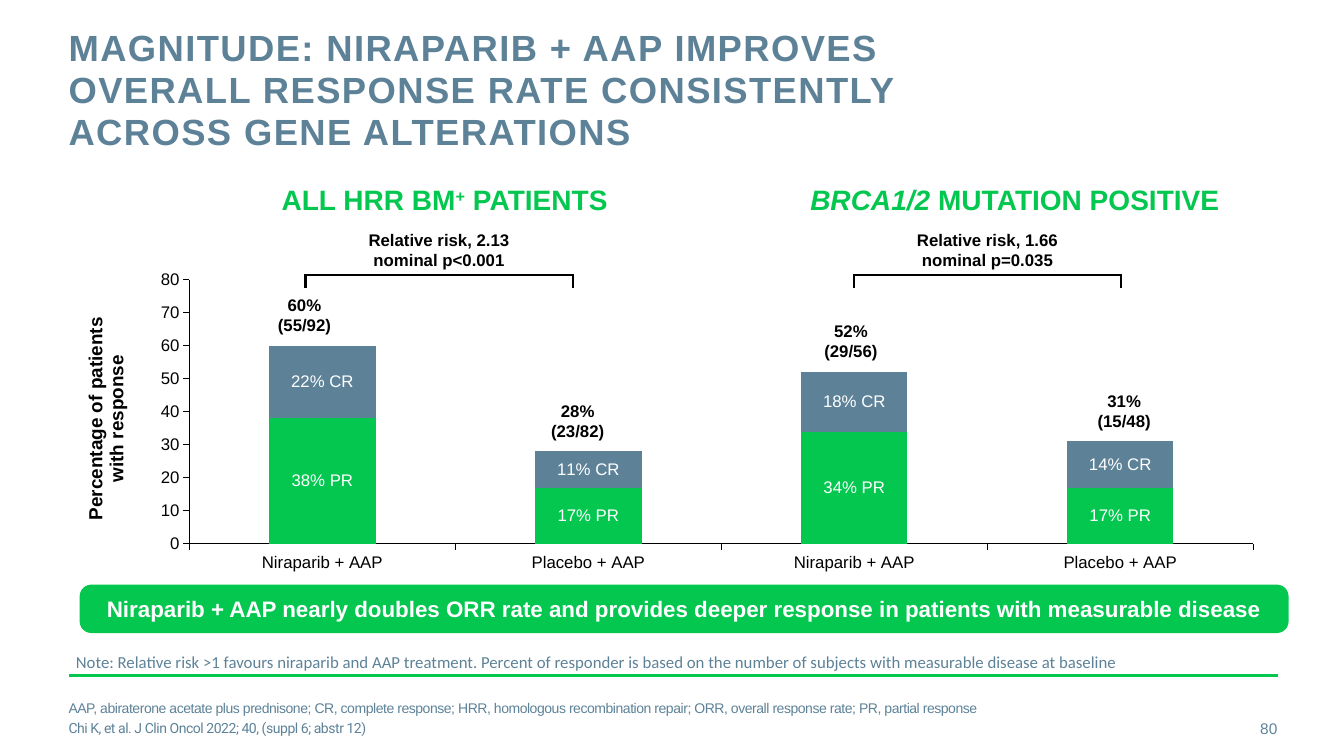
from dataclasses import dataclass

import pptx
import pptx.chart.data
import pptx.dml.color
import pptx.enum.chart
import pptx.enum.shapes
import pptx.enum.text
import pptx.oxml
import pptx.oxml.ns
import pptx.util
from pptx.util import Inches, Pt

ALIGN = pptx.enum.text.PP_ALIGN
ANCHOR = pptx.enum.text.MSO_ANCHOR


@dataclass(frozen=True)
class Theme:
    green: str = "03C74F"
    slate: str = "5D8298"
    black: str = "000000"
    white: str = "FFFFFF"
    face: str = "Arial"
    title: float = 26
    head: float = 20
    claim: float = 16
    axis: float = 13.5
    label: float = 12
    page: float = 11
    foot: float = 10


THEME = Theme()
PEAK = 80
ARMS = ["Niraparib + AAP", "Placebo + AAP"] * 2
PARTIAL = [38, 17, 34, 17]
FULL = [22, 11, 18, 14]
COUNTS = ["55/92", "23/82", "29/56", "15/48"]


def rgb(code):
    return pptx.dml.color.RGBColor.from_string(code)


def style(font, size, color, bold=False, face=THEME.face):
    font.size, font.bold, font.name = Pt(size), bold, face
    font.color.rgb = rgb(color)


def add_run(para, text, size, color, bold=False, face=THEME.face, space=0):
    run = para.add_run()
    run.text = text
    style(run.font, size, color, bold, face)
    if space:
        run.font._element.set("spc", str(round(space * 100)))
    return run


def add_lines(para, lines, *look):
    """Put lines in one paragraph, with a line break between them."""
    for i, line in enumerate(lines):
        if i:
            para.add_line_break()
        add_run(para, line, *look)


def set_frame(frame, align=ALIGN.LEFT, anchor=ANCHOR.TOP, wrap=True):
    frame.margin_left = frame.margin_right = 0
    frame.margin_top = frame.margin_bottom = 0
    frame.word_wrap, frame.vertical_anchor = wrap, anchor
    frame.auto_size = pptx.enum.text.MSO_AUTO_SIZE.NONE
    frame.paragraphs[0].alignment = align
    return frame


def add_text(slide, box, *look, **more):
    shape = slide.shapes.add_textbox(*map(Inches, box))
    return set_frame(shape.text_frame, *look, **more)


def add_line(shapes, x1, y1, x2, y2, color, width):
    line = shapes.add_connector(pptx.enum.shapes.MSO_CONNECTOR.STRAIGHT,
                                Inches(x1), Inches(y1), Inches(x2), Inches(y2))
    line.line.color.rgb, line.line.width = rgb(color), Pt(width)
    line._element.spPr.append(pptx.oxml.parse_xml(
        "<a:effectLst %s/>" % pptx.oxml.ns.nsdecls("a")))


def add_title(slide, box):
    shape = slide.shapes.title
    shape.left, shape.top, shape.width, shape.height = map(Inches, box)
    para = set_frame(shape.text_frame).paragraphs[0]
    para.line_spacing = Pt(30)
    add_run(para, "MAGNITUDE: NIRAPARIB + AAP IMPROVES OVERALL RESPONSE RATE "
            "CONSISTENTLY ACROSS GENE ALTERATIONS",
            THEME.title, THEME.slate, True, space=1)


def set_place(parent, after, inner=False, **parts):
    """Fix a chart part at shares of the chart's size."""
    for old in parent.findall(pptx.oxml.ns.qn("c:layout")):
        parent.remove(old)
    target = '<c:layoutTarget val="inner"/>' if inner else ""
    modes = "".join(f'<c:{key}Mode val="edge"/>' for key in "xy")
    sizes = "".join(f'<c:{key} val="{val}"/>' for key, val in parts.items())
    node = pptx.oxml.parse_xml(
        f'<c:layout {pptx.oxml.ns.nsdecls("c")}><c:manualLayout>'
        f'{target}{modes}{sizes}</c:manualLayout></c:layout>')
    if after is None:
        parent.insert(0, node)
    else:
        after.addnext(node)


def style_axis(axis):
    axis.has_major_gridlines = False
    axis.major_tick_mark = pptx.enum.chart.XL_TICK_MARK.OUTSIDE
    axis.minor_tick_mark = pptx.enum.chart.XL_TICK_MARK.NONE
    axis.format.line.color.rgb = rgb(THEME.black)
    axis.format.line.width = Pt(0.75)
    style(axis.tick_labels.font, THEME.label, THEME.black)


def add_bars(slide, box):
    data = pptx.chart.data.CategoryChartData()
    data.categories = ARMS
    data.add_series("PR", PARTIAL)
    data.add_series("CR", FULL)
    chart = slide.shapes.add_chart(
        pptx.enum.chart.XL_CHART_TYPE.COLUMN_STACKED,
        *map(Inches, box), data).chart
    chart.has_legend = chart.has_title = False
    style(chart.font, THEME.label, THEME.black)
    plot = chart.plots[0]
    plot.gap_width, plot.overlap, plot.vary_by_categories = 150, 100, False
    for bars, color in zip(plot.series, (THEME.green, THEME.slate)):
        bars.format.fill.solid()
        bars.format.fill.fore_color.rgb = rgb(color)
        tags = bars.data_labels
        tags.show_value = True
        tags.position = pptx.enum.chart.XL_LABEL_POSITION.CENTER
        tags.number_format = f'0"% {bars.name}"'
        tags.number_format_is_linked = False
        style(tags.font, THEME.label, THEME.white)
    style_axis(chart.category_axis)
    axis = chart.value_axis
    style_axis(axis)
    axis.minimum_scale, axis.maximum_scale, axis.major_unit = 0, PEAK, 10
    para = axis.axis_title.text_frame.paragraphs[0]
    para.alignment = ALIGN.CENTER
    add_run(para, "Percentage of patients", THEME.axis, THEME.black, True)
    para = axis.axis_title.text_frame.add_paragraph()
    para.alignment = ALIGN.CENTER
    add_run(para, "with response", THEME.axis, THEME.black, True)
    title = axis.axis_title._element
    set_place(title, title.find(pptx.oxml.ns.qn("c:tx")), x=0.01, y=0.16)
    area = chart._chartSpace.chart.plotArea
    set_place(area, None, True, x=0.1, y=0.05, w=0.88, h=0.84)


def add_totals(slide, box):
    """Centre each arm's total above its bar; box spans the bars' axis."""
    left, top, step, height = box
    for i, (part, full, count) in enumerate(zip(PARTIAL, FULL, COUNTS)):
        total = part + full
        y = top + height * (1 - total / PEAK) - 0.51
        frame = add_text(slide, (left + i * step, y, 0.94, 0.4), ALIGN.CENTER)
        add_lines(frame.paragraphs[0], [f"{total}%", f"({count})"],
                  THEME.label, THEME.black, True)


def add_group(slide, box, head, risk, span):
    """Head one patient group and bracket its two arms."""
    left, top, width, height = box
    para = add_text(slide, box, ALIGN.CENTER, ANCHOR.MIDDLE).paragraphs[0]
    for text, kind in head:
        run = add_run(para, text, THEME.head, THEME.green, True)
        run.font.italic = kind == "italic"
        if kind == "raised":
            run.font._element.set("baseline", "30000")
    start, end = span
    mid = (start + end) / 2
    frame = add_text(slide, (mid - 0.73, top + 0.52, 1.46, 0.4), ALIGN.CENTER)
    add_lines(frame.paragraphs[0], risk, THEME.label, THEME.black, True)
    shapes = slide.shapes.add_group_shape().shapes
    y = top + 0.97
    add_line(shapes, start, y, end, y, THEME.black, 1.5)
    for x in (start + 0.01, end - 0.01):
        add_line(shapes, x, y - 0.01, x, y + 0.13, THEME.black, 1.5)


def add_claim(slide, box):
    shape = slide.shapes.add_shape(
        pptx.enum.shapes.MSO_SHAPE.ROUNDED_RECTANGLE, *map(Inches, box))
    shape.adjustments[0] = 0.24
    shape.shadow.inherit = False
    shape.fill.solid()
    shape.fill.fore_color.rgb = rgb(THEME.green)
    shape.line.fill.background()
    frame = set_frame(shape.text_frame, ALIGN.CENTER, ANCHOR.MIDDLE)
    add_run(frame.paragraphs[0], "Niraparib + AAP nearly doubles ORR rate and "
            "provides deeper response in patients with measurable disease",
            THEME.claim, THEME.white, True)


def add_foot(slide, box):
    left, top, width, height = box
    para = add_text(slide, (left + 0.02, top, 10.44, 0.42), ALIGN.CENTER,
                    wrap=False).paragraphs[0]
    para.line_spacing = 0.9
    add_run(para, "Note: Relative risk >1 favours niraparib and AAP treatment. "
            "Percent of responder is based on the number of subjects with "
            "measurable disease at baseline",
            THEME.label, THEME.slate, face="Calibri")
    add_line(slide.shapes, left, top + 0.21, left + width, top + 0.21,
             THEME.green, 2)
    frame = add_text(slide, (left, top + 0.43, 11.84, 0.4),
                     anchor=ANCHOR.MIDDLE)
    add_run(frame.paragraphs[0], "AAP, abiraterone acetate plus prednisone; "
            "CR, complete response; HRR, homologous recombination repair; "
            "ORR, overall response rate; PR, partial response",
            THEME.foot, THEME.slate, space=-0.3)
    para = frame.add_paragraph()
    para.space_before = Pt(2)
    add_run(para, "Chi K, et al. J Clin Oncol 2022; 40, (suppl 6; abstr 12)",
            THEME.foot, THEME.slate, face="Roboto", space=-0.3)
    frame = add_text(slide, (left + width - 0.87, top + 0.54, 0.86, 0.4),
                     ALIGN.RIGHT, ANCHOR.MIDDLE)
    add_run(frame.paragraphs[0], "80", THEME.page, THEME.slate)


def main():
    deck = pptx.Presentation()
    deck.slide_width, deck.slide_height = Inches(13.33), Inches(7.5)
    slide = deck.slides.add_slide(deck.slide_layouts.get_by_name("Title Only"))
    add_title(slide, (0.68, 0.27, 9.56, 0.88))
    add_bars(slide, (0.68, 2.62, 11.99, 3.12))
    add_totals(slide, (2.55, 2.77, 2.71, 2.64))
    add_group(slide, (2.44, 1.76, 3.94, 0.44),
              [("ALL HRR BM", ""), ("+", "raised"), (" PATIENTS", "")],
              ["Relative risk, 2.13", "nominal p<0.001"], (3.02, 5.69))
    add_group(slide, (7.78, 1.76, 4.57, 0.44),
              [("BRCA1/2", "italic"), (" MUTATION POSITIVE", "")],
              ["Relative risk, 1.66", "nominal p=0.035"], (8.46, 11.13))
    add_claim(slide, (0.79, 5.8, 11.99, 0.48))
    add_foot(slide, (0.68, 6.49, 12, 0.94))
    deck.save("out.pptx")


if __name__ == "__main__":
    main()
